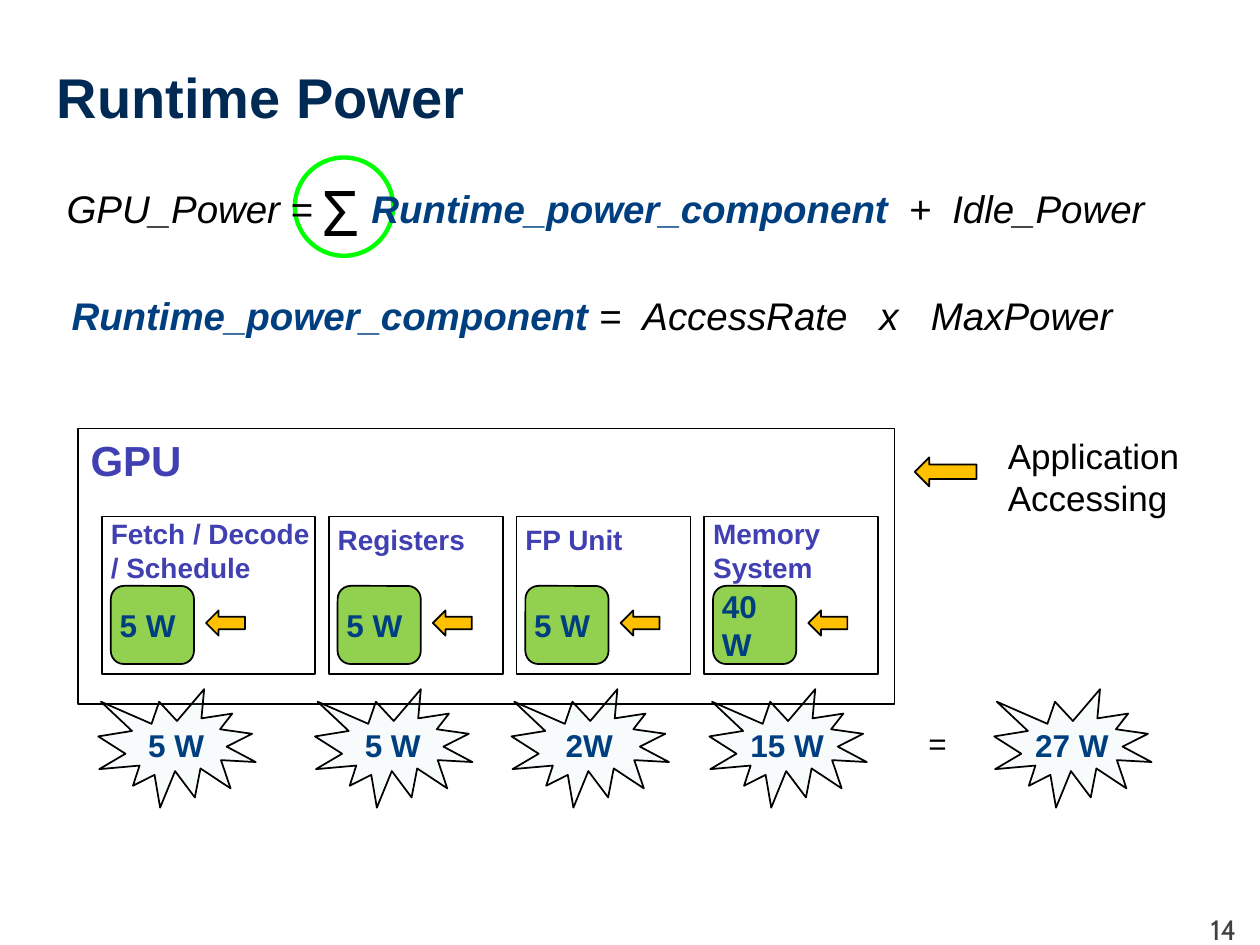
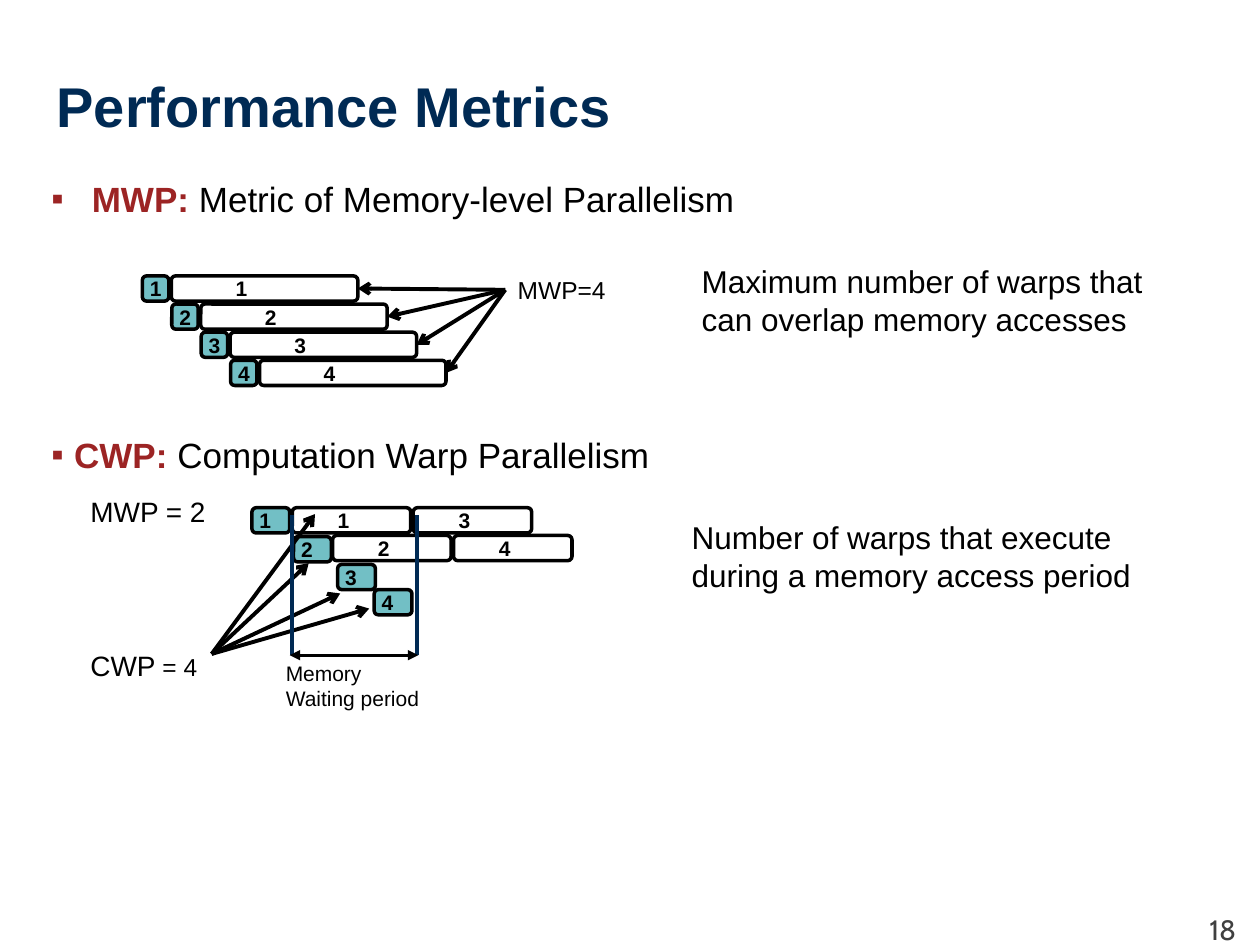
from dataclasses import dataclass

from lxml import etree
from pptx import Presentation
from pptx.dml.color import RGBColor
from pptx.enum.shapes import MSO_CONNECTOR, MSO_SHAPE
from pptx.enum.text import MSO_ANCHOR, PP_ALIGN
from pptx.oxml.ns import qn
from pptx.util import Inches, Pt

RECT, ROUNDED, OVAL = MSO_SHAPE.RECTANGLE, MSO_SHAPE.ROUNDED_RECTANGLE, MSO_SHAPE.OVAL
BURST, DOWN_ARROW = MSO_SHAPE.EXPLOSION1, MSO_SHAPE.DOWN_ARROW
BAR = MSO_SHAPE.FLOWCHART_ALTERNATE_PROCESS
STRAIGHT = MSO_CONNECTOR.STRAIGHT
TOP, MIDDLE = MSO_ANCHOR.TOP, MSO_ANCHOR.MIDDLE
LEFT, CENTER, RIGHT = PP_ALIGN.LEFT, PP_ALIGN.CENTER, PP_ALIGN.RIGHT
RIGHT_SIDE = 3
TITLE_ONLY = 5


@dataclass(frozen=True)
class Theme:
    navy: str = "002A54"
    blue: str = "003F7F"
    violet: str = "4040B3"
    red: str = "9C2424"
    grey: str = "404040"
    black: str = "000000"
    amber: str = "FFC000"
    green: str = "92D050"
    lime: str = "00FF00"
    ice: str = "BBE0E3"
    teal: str = "72BFC5"
    font: str = "Arial"
    number_font: str = "Cabin"
    symbol_font: str = "Karla"
    title: int = 32
    symbol: int = 36
    heading: int = 24
    formula: int = 22
    body: int = 20
    note: int = 18
    label: int = 16
    small: int = 14
    tiny: int = 12


T = Theme()
BASE = dict(name=T.font, size=T.body, color=T.black, bold=False, italic=False)
FORMULA = dict(size=T.formula, italic=True)
TERM = dict(FORMULA, color=T.blue, bold=True)
WATTS = dict(size=T.note, color=T.blue, bold=True)
UNIT_NAME = dict(size=T.label, color=T.violet, bold=True)
BAR_NUMBER = dict(size=T.tiny, bold=True)
METRIC = dict(color=T.red, bold=True)


def inches(*lengths):
    return [Inches(length) for length in lengths]


def apply(target, values):
    for name, value in values.items():
        setattr(target, name, value)


def style_font(font, **changes):
    values = {**BASE, **changes}
    font.color.rgb = RGBColor.from_string(values.pop("color"))
    values["size"] = Pt(values["size"])
    apply(font, values)


def write(frame, *lines, align=LEFT, anchor=TOP, margins=(0.1, 0.05, 0.1, 0.05)):
    """Fill the frame; each line is a list of (text, style) runs."""
    sides = ("margin_left", "margin_top", "margin_right", "margin_bottom")
    apply(frame, dict(zip(sides, inches(*margins)), word_wrap=True, vertical_anchor=anchor))
    for index, runs in enumerate(lines):
        paragraph = frame.add_paragraph() if index else frame.paragraphs[0]
        paragraph.alignment = align
        for text, style in runs:
            run = paragraph.add_run()
            run.text = text
            style_font(run.font, **style)


def add_text(slide, box, *lines, **layout):
    frame = slide.shapes.add_textbox(*inches(*box)).text_frame
    write(frame, *lines, **layout)
    return frame.paragraphs[0]


def add_shape(slide, kind, box, fill=None, line=T.black, weight=1):
    shape = slide.shapes.add_shape(kind, *inches(*box))
    shape.shadow.inherit = False
    if fill:
        shape.fill.solid()
        shape.fill.fore_color.rgb = RGBColor.from_string(fill)
    else:
        shape.fill.background()
    shape.line.color.rgb = RGBColor.from_string(line)
    shape.line.width = Pt(weight)
    return shape


def add_line(slide, start, end, color=T.black, weight=2.25, head=None, tail=None):
    line = slide.shapes.add_connector(STRAIGHT, *inches(*start, *end))
    line.line.color.rgb = RGBColor.from_string(color)
    line.line.width = Pt(weight)
    outline = line.line._get_or_add_ln()
    for tag, kind in (("a:headEnd", head), ("a:tailEnd", tail)):
        if kind:
            etree.SubElement(outline, qn(tag), type=kind)
    etree.SubElement(line._element.spPr, qn("a:effectLst"))
    return line


def set_tabs(paragraph, *stops):
    tabs = etree.SubElement(paragraph._p.get_or_add_pPr(), qn("a:tabLst"))
    for stop in stops:
        etree.SubElement(tabs, qn("a:tab"), pos=str(Inches(stop)), algn="l")


def set_bullet(paragraph, indent):
    properties = paragraph._p.get_or_add_pPr()
    properties.set("marL", str(Inches(indent)))
    properties.set("indent", str(-Inches(indent)))
    etree.SubElement(properties, qn("a:buFont"), typeface=T.font)
    etree.SubElement(properties, qn("a:buChar"), char="▪")


def add_slide(deck, title, title_box, number):
    slide = deck.slides.add_slide(deck.slide_layouts[TITLE_ONLY])
    heading = slide.shapes.title
    apply(heading, dict(zip(("left", "top", "width", "height"), inches(*title_box))))
    write(heading.text_frame, [(title, dict(size=T.title, color=T.navy, bold=True))],
          anchor=MIDDLE)
    add_text(slide, (9.25, 7.19, 0.66, 0.17),
             [(number, dict(name=T.number_font, size=T.label, color=T.grey))], align=RIGHT)
    return slide


def access_arrow(slide, box):
    add_shape(slide, DOWN_ARROW, box, T.amber).rotation = 90


def power_formulas(slide, left, top):
    add_shape(slide, OVAL, (left + 1.91, top, 0.78, 0.78), line=T.lime, weight=2.5)
    add_text(slide, (left, top + 0.17, 2.42, 0.47),
             [("GPU_Power", FORMULA), (" =", dict(size=T.formula))])
    add_text(slide, (left + 2.03, top + 0.08, 0.63, 0.71),
             [("Σ", dict(name=T.symbol_font, size=T.symbol))])
    total = add_text(slide, (left + 2.42, top + 0.17, 6.43, 0.47),
                     [("Runtime_power_component", TERM),
                      ("\t+\t", dict(size=T.formula)), ("Idle_Power", FORMULA)])
    set_tabs(total, 4.27, 4.61)
    add_text(slide, (left + 0.04, top + 1.02, 4.77, 0.47),
             [("Runtime_power_component", TERM), (" =", FORMULA)])
    product = add_text(slide, (left + 4.57, top + 1.02, 4.22, 0.47),
                       [("AccessRate\tx\tMaxPower", FORMULA)])
    set_tabs(product, 1.88, 2.29)


def gpu_unit(slide, left, top, width, name, max_power, name_top):
    unit = add_shape(slide, RECT, (left, top, width, 1.25))
    write(unit.text_frame, [(name, UNIT_NAME)], margins=(0.07, name_top, 0, 0))
    power = add_shape(slide, ROUNDED, (left + 0.07, top + 0.55, 0.66, 0.62), T.green)
    write(power.text_frame, [(max_power, WATTS)], anchor=MIDDLE, margins=(0.04, 0, 0, 0))
    access_arrow(slide, (left + 0.88, top + 0.69, 0.2, 0.31))


def gpu_diagram(slide, left, top):
    gpu = add_shape(slide, RECT, (left, top, 6.48, 2.19))
    write(gpu.text_frame, [("GPU", dict(UNIT_NAME, size=T.heading))])
    units = [
        ("Fetch / Decode / Schedule", "5 W", 1.69, 0),
        ("Registers", "5 W", 1.38, 0.05),
        ("FP Unit", "5 W", 1.38, 0.05),
        ("Memory System", "40 W", 1.38, 0),
    ]
    unit_left = left + 0.19
    for name, max_power, width, name_top in units:
        gpu_unit(slide, unit_left, top + 0.7, width, name, max_power, name_top)
        unit_left += width + 0.11
    access_arrow(slide, (left + 6.77, top + 0.1, 0.23, 0.49))
    add_text(slide, (left + 7.28, top, 1.67, 1.45),
             [("Application", {})], [("Accessing", {})])


def power_sum(slide, left, top):
    bursts = [(0, "5 W"), (1.72, "5 W"), (3.28, "2W"), (4.85, "15 W"), (7.11, "27 W")]
    for offset, power in bursts:
        burst = add_shape(slide, BURST, (left + offset, top, 1.25, 0.94), T.ice)
        color = burst._element.spPr.find(qn("a:solidFill"))[0]
        etree.SubElement(color, qn("a:alpha"), val="11000")
        write(burst.text_frame, [(power, WATTS)], align=CENTER, anchor=MIDDLE,
              margins=(0, 0, 0, 0))
    add_text(slide, (left + 6.49, top + 0.23, 0.4, 0.4), [("=", dict(size=T.note))])


def metric_heading(slide, top, metric, meaning, indent):
    heading = add_text(slide, (0.31, top, 9.45, 0.44), [(metric, METRIC), (" " + meaning, {})])
    set_bullet(heading, indent)


def warp_bar(slide, box, number, number_left, fill=None):
    bar = add_shape(slide, BAR, box, fill, weight=2)
    write(bar.text_frame, [(number, BAR_NUMBER)], anchor=MIDDLE,
          margins=(number_left, 0, 0, 0))
    return bar


def mwp_chart(slide, left, top):
    """Four staggered warps whose memory accesses overlap."""
    step_x, step_y = 0.7 / 3, 0.67 / 3
    source = (left + 2.88, top + 0.11)
    for row in range(4):
        x, y, number = left + row * step_x, top + row * step_y, str(row + 1)
        warp_bar(slide, (x, y, 0.21, 0.2), number, 0.05, T.teal)
        memory = warp_bar(slide, (x + 0.23, y, 1.48, 0.2), number, 0.5)
        arrow = add_line(slide, source, (x + 1.71, y + 0.1), tail="arrow")
        arrow.end_connect(memory, RIGHT_SIDE)
    add_text(slide, (left + 2.88, top - 0.06, 0.98, 0.4), [("MWP=4", dict(size=T.small))])
    add_text(slide, (left + 4.34, top - 0.16, 4.14, 0.71),
             [("Maximum number of warps that can overlap memory accesses", dict(size=T.note))])


def cwp_chart(slide, left, top):
    """Warps that compute while one memory access is pending."""
    for x, y, number in [(1.38, 0, "1"), (1.71, 0.23, "2"), (2.06, 0.45, "3"), (2.35, 0.65, "4")]:
        warp_bar(slide, (left + x, top + y, 0.3, 0.2), number, 0.05, T.teal)
    for x, y, numbers in [(1.7, 0, "13"), (2.02, 0.22, "24")]:
        for column, number in enumerate(numbers):
            warp_bar(slide, (left + x + column * 0.96, top + y, 0.94, 0.2), number, 0.35)
    for x, y in [(1.88, 0.05), (1.83, 0.44), (2.08, 0.68), (2.31, 0.8)]:
        add_line(slide, (left + 1.06, top + 1.16), (left + x, top + y), tail="arrow")
    for x in (1.7, 2.69):
        add_line(slide, (left + x, top + 0.06), (left + x, top + 1.17), T.navy)
    add_line(slide, (left + 1.68, top + 1.17), (left + 2.7, top + 1.17), weight=1.5,
             head="triangle", tail="triangle")
    add_text(slide, (left + 1.55, top + 1.16, 1.93, 0.52),
             [("Memory", dict(size=T.tiny))], [("Waiting period", dict(size=T.tiny))])
    add_text(slide, (left, top - 0.15, 1.46, 0.37), [("MWP = 2", dict(size=T.label))])
    add_text(slide, (left, top + 1.07, 1.13, 0.4),
             [("CWP", dict(size=T.label)), (" = 4", dict(size=T.small))])
    add_text(slide, (left + 4.77, top + 0.03, 4.22, 0.71),
             [("Number of warps that execute during a memory access period",
               dict(size=T.note))])


def runtime_power_slide(deck):
    slide = add_slide(deck, "Runtime Power", (0.35, 0.35, 9, 0.83), "14")
    power_formulas(slide, 0.43, 1.25)
    gpu_diagram(slide, 0.62, 3.4)
    power_sum(slide, 0.78, 5.47)


def performance_metrics_slide(deck):
    slide = add_slide(deck, "Performance Metrics", (0.35, 0.42, 9.34, 0.83), "18")
    metric_heading(slide, 1.36, "MWP:", "Metric of Memory-level Parallelism", 0.32)
    mwp_chart(slide, 1.13, 2.19)
    metric_heading(slide, 3.39, "CWP:", "Computation Warp Parallelism", 0.18)
    cwp_chart(slide, 0.62, 4.03)


def main():
    deck = Presentation()
    deck.slide_width, deck.slide_height = inches(10, 7.5)
    runtime_power_slide(deck)
    performance_metrics_slide(deck)
    deck.save("out.pptx")


if __name__ == "__main__":
    main()
